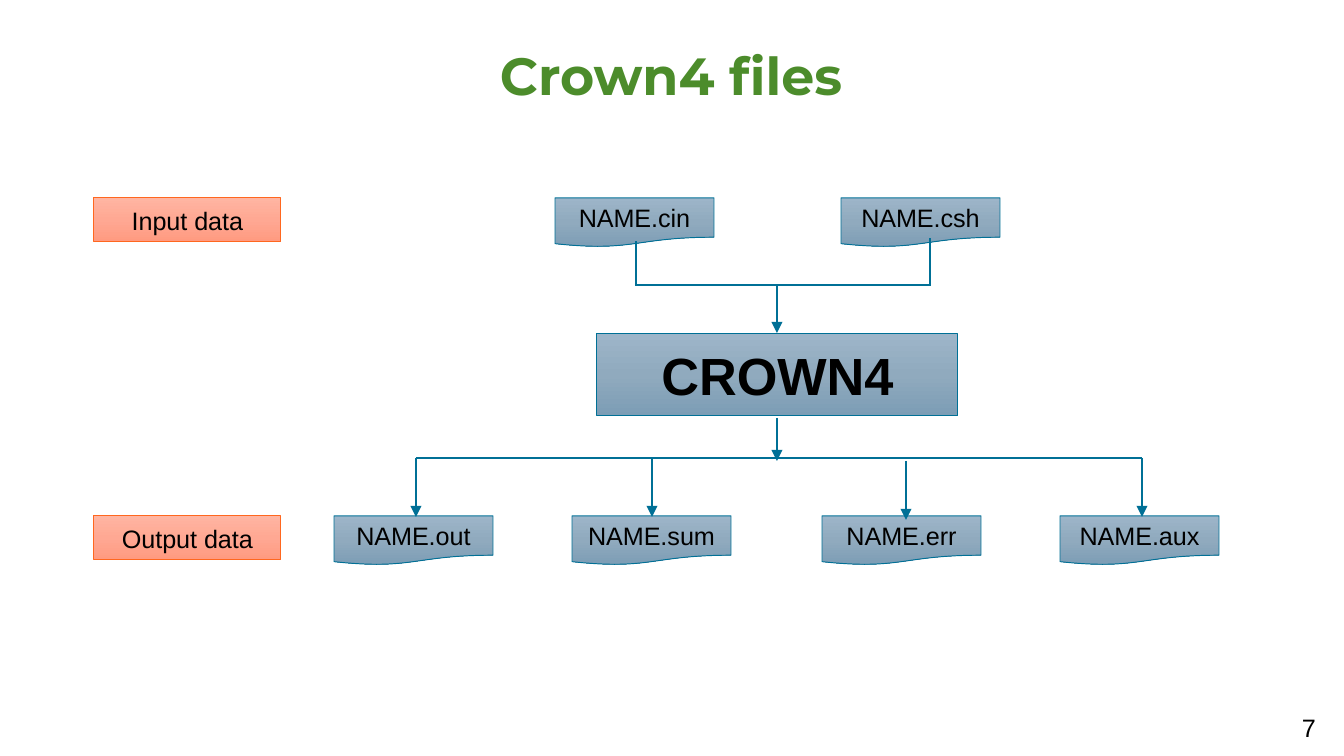
import copy

import pptx
import pptx.dml.color
import pptx.enum.shapes
import pptx.enum.text
import pptx.oxml
import pptx.oxml.ns
import pptx.util

RGBColor = pptx.dml.color.RGBColor
MSO_SHAPE = pptx.enum.shapes.MSO_SHAPE
MSO_ANCHOR = pptx.enum.text.MSO_ANCHOR
qn = pptx.oxml.ns.qn

EMU_PER_PX = 914400 / 134.4
GREEN = RGBColor(0x4C, 0x8C, 0x2B)
BLACK = RGBColor(0x00, 0x00, 0x00)
TEAL = RGBColor(0x00, 0x70, 0x96)
ORANGE = RGBColor(0xFF, 0x67, 0x1F)
BLUE_SHADES = (
    RGBColor(0x9D, 0xB5, 0xC9),
    RGBColor(0x90, 0xAA, 0xBE),
    RGBColor(0x7C, 0x9D, 0xB5),
)
CORAL_SHADES = (
    RGBColor(0xFF, 0xB5, 0xA2),
    RGBColor(0xFF, 0xA8, 0x93),
    RGBColor(0xFF, 0x9A, 0x80),
)

INPUT_TOP, OUTPUT_TOP = 198, 516
FILE_WIDTH, FILE_HEIGHT = 159, 49
INPUT_BUS, OUTPUT_BUS = 285, 458
PROGRAM_CENTER = 777


def px(length):
    return pptx.util.Emu(round(length * EMU_PER_PX))


def write(shape, text, size=13.5, font="Arial", color=BLACK, bold=False,
          anchor=MSO_ANCHOR.MIDDLE, spacing=None):
    frame = shape.text_frame
    frame.word_wrap = True
    frame.vertical_anchor = anchor
    frame.margin_left = frame.margin_right = 0
    paragraph = frame.paragraphs[0]
    paragraph.alignment = pptx.enum.text.PP_ALIGN.CENTER
    paragraph.line_spacing = spacing
    run = paragraph.add_run()
    run.text = text
    run.font.size = pptx.util.Pt(size)
    run.font.name = font
    run.font.bold = bold
    run.font.color.rgb = color


def shade(shape, colors):
    shape.fill.gradient()
    shape.fill.gradient_angle = 270
    stop_list = shape._element.spPr.find(qn("a:gradFill")).find(qn("a:gsLst"))
    stop_list.insert(1, copy.deepcopy(stop_list[0]))
    for index, (stop, color) in enumerate(zip(shape.fill.gradient_stops, colors)):
        stop.position = index / 2
        stop.color.rgb = color


def add_box(slide, text, left, top, width, height, kind=MSO_SHAPE.RECTANGLE,
            shades=BLUE_SHADES, outline=TEAL, **text_format):
    box = slide.shapes.add_shape(kind, px(left), px(top), px(width), px(height))
    box.shadow.inherit = False
    shade(box, shades)
    box.line.color.rgb = outline
    box.line.width = pptx.util.Pt(0.5)
    write(box, text, **text_format)


def add_file(slide, name, left, top):
    add_box(slide, name, left, top, FILE_WIDTH, FILE_HEIGHT,
            kind=MSO_SHAPE.FLOWCHART_DOCUMENT)


def add_label(slide, text, top):
    add_box(slide, text, 94, top, 187, 44, shades=CORAL_SHADES, outline=ORANGE)


def add_line(slide, x1, y1, x2, y2, arrow=False):
    line = slide.shapes.add_connector(
        pptx.enum.shapes.MSO_CONNECTOR.STRAIGHT, px(x1), px(y1), px(x2), px(y2))
    line.line.color.rgb = TEAL
    line.line.width = pptx.util.Pt(1.5)
    if arrow:
        pptx.oxml.xmlchemy.OxmlElement
        head = line.line._get_or_add_ln().makeelement(qn("a:tailEnd"), {"type": "triangle"})
        line.line._get_or_add_ln().append(head)
    properties = line._element.spPr
    properties.append(properties.makeelement(qn("a:effectLst"), {}))


def add_title(slide, text):
    title = slide.shapes.title
    title.left, title.top, title.width, title.height = px(198), px(40), px(946), px(77)
    write(title, text, size=28, font="Montserrat", color=GREEN, bold=True, spacing=0.9)


def add_page_number(slide, number):
    box = slide.shapes.add_textbox(px(1278), px(706), px(62), px(44))
    write(box, number, anchor=MSO_ANCHOR.TOP)


def main():
    presentation = pptx.Presentation()
    presentation.slide_width, presentation.slide_height = px(1344), px(756)
    slide = presentation.slides.add_slide(presentation.slide_layouts[5])
    add_title(slide, "Crown4 files")
    add_box(slide, "CROWN4", 597, 334, 361, 82, size=28, bold=True)

    for name, left, stem, stem_top in (
        ("NAME.cin", 555, 636, 241),
        ("NAME.csh", 841, 930, 238),
    ):
        add_file(slide, name, left, INPUT_TOP)
        add_line(slide, stem, INPUT_BUS, stem, stem_top)
    add_line(slide, 635, INPUT_BUS, 931, INPUT_BUS)
    add_line(slide, PROGRAM_CENTER, INPUT_BUS, PROGRAM_CENTER, 333, arrow=True)

    add_line(slide, PROGRAM_CENTER, 418, PROGRAM_CENTER, 461, arrow=True)
    add_line(slide, 416, OUTPUT_BUS, 1142, OUTPUT_BUS)
    for name, left, stem, drop in (
        ("NAME.out", 334, 416, 0),
        ("NAME.sum", 572, 652, 0),
        ("NAME.err", 822, 906, 3),
        ("NAME.aux", 1060, 1142, 0),
    ):
        add_file(slide, name, left, OUTPUT_TOP)
        add_line(slide, stem, OUTPUT_BUS + drop, stem, OUTPUT_TOP + 1 + drop, arrow=True)

    add_label(slide, "Input data", INPUT_TOP)
    add_label(slide, "Output data", OUTPUT_TOP)
    add_page_number(slide, "7")
    presentation.save("out.pptx")


if __name__ == "__main__":
    main()
